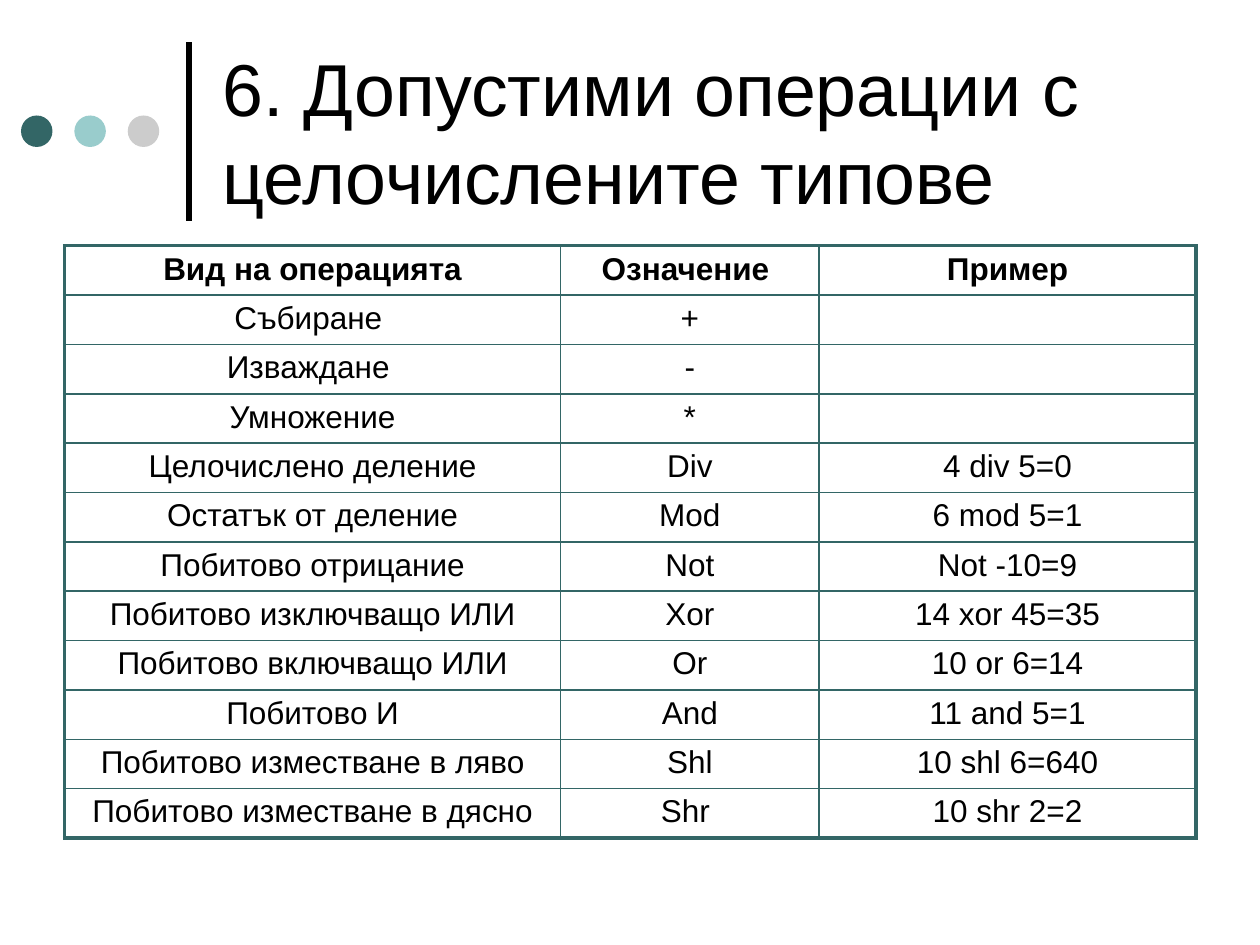
from lxml import etree
from pptx import Presentation
from pptx.dml.color import RGBColor
from pptx.enum.shapes import MSO_CONNECTOR, MSO_SHAPE
from pptx.enum.text import MSO_ANCHOR, PP_ALIGN
from pptx.oxml.ns import qn
from pptx.util import Pt

STRAIGHT = MSO_CONNECTOR.STRAIGHT
OVAL = MSO_SHAPE.OVAL
MIDDLE = MSO_ANCHOR.MIDDLE
CENTER = PP_ALIGN.CENTER

BLACK = RGBColor(0x00, 0x00, 0x00)
TEAL = RGBColor(0x33, 0x66, 0x66)
AQUA = RGBColor(0x99, 0xCC, 0xCC)
SILVER = RGBColor(0xCC, 0xCC, 0xCC)

TITLE = "6. Допустими операции с целочислените типове"
COLUMN_WIDTHS = (283.5, 147.6, 215.5)
ROW_HEIGHT = 27.4
THIN, THICK = 1, 2.25
OPERATIONS = (
    ("Вид на операцията", "Означение ", "Пример"),
    ("Събиране ", "+", ""),
    ("Изваждане ", "-", ""),
    ("Умножение", "*", ""),
    ("Целочислено деление", "Div", "4 div 5=0"),
    ("Остатък от деление", "Mod", "6 mod 5=1"),
    ("Побитово отрицание", "Not", "Not -10=9"),
    ("Побитово изключващо ИЛИ", "Xor", "14 xor 45=35"),
    ("Побитово включващо ИЛИ", "Or", "10 or 6=14"),
    ("Побитово И", "And", "11 and 5=1"),
    ("Побитово изместване в ляво", "Shl", "10 shl 6=640"),
    ("Побитово изместване в дясно", "Shr ", "10 shr 2=2"),
)


def apply_format(target, values):
    for name, value in values.items():
        setattr(target, name, value)


def write_text(para, text, size, bold=False):
    span = para.add_run()
    span.text = text
    apply_format(span.font, {"name": "Arial", "size": Pt(size), "bold": bold})
    span.font.color.rgb = BLACK


def set_borders(cell, widths):
    properties = cell._tc.get_or_add_tcPr()
    for index, (side, width) in enumerate(widths.items()):
        line = etree.Element(qn(f"a:ln{side}"), w=str(Pt(width)))
        fill = etree.SubElement(line, qn("a:solidFill"))
        etree.SubElement(fill, qn("a:srgbClr"), val=str(TEAL))
        properties.insert(index, line)


def add_dots(page, left, top, size, pitch):
    for index, color in enumerate((TEAL, AQUA, SILVER)):
        dot = page.shapes.add_shape(
            OVAL, Pt(left + index * pitch), Pt(top), Pt(size), Pt(size))
        dot.shadow.inherit = False
        dot.fill.solid()
        dot.fill.fore_color.rgb = color
        dot.line.fill.background()


def add_rule(page, left, top, height):
    rule = page.shapes.add_connector(
        STRAIGHT, Pt(left), Pt(top + height), Pt(left), Pt(top))
    rule.line.color.rgb = BLACK
    rule.line.width = Pt(3)
    etree.SubElement(rule._element.spPr, qn("a:effectLst"))


def add_title(page, left, top, width, height):
    box = page.shapes.add_textbox(Pt(left), Pt(top), Pt(width), Pt(height))
    apply_format(box.text_frame, {"word_wrap": True, "vertical_anchor": MIDDLE})
    write_text(box.text_frame.paragraphs[0], TITLE, 42)


def add_operations(page, left, top):
    rows, columns = len(OPERATIONS), len(COLUMN_WIDTHS)
    table = page.shapes.add_table(
        rows, columns, Pt(left), Pt(top),
        Pt(sum(COLUMN_WIDTHS)), Pt(rows * ROW_HEIGHT)).table
    apply_format(table, {"first_row": False, "horz_banding": False})
    for column, width in zip(table.columns, COLUMN_WIDTHS):
        column.width = Pt(width)
    for row_index, texts in enumerate(OPERATIONS):
        table.rows[row_index].height = Pt(ROW_HEIGHT)
        for column_index, text in enumerate(texts):
            cell = table.cell(row_index, column_index)
            apply_format(cell, {"margin_top": Pt(3.3), "margin_bottom": Pt(3.3)})
            cell.fill.background()
            outer_sides = {
                "L": column_index == 0,
                "R": column_index == columns - 1,
                "T": row_index == 0,
                "B": row_index == rows - 1,
            }
            set_borders(cell, {side: THICK if outer else THIN
                               for side, outer in outer_sides.items()})
            para = cell.text_frame.paragraphs[0]
            para.alignment = CENTER
            if text:
                write_text(para, text, 18, bold=row_index == 0)


def main():
    deck = Presentation()
    apply_format(deck, {"slide_width": Pt(720), "slide_height": Pt(540)})
    page = deck.slides.add_slide(deck.slide_layouts[6])
    add_rule(page, 108, 24, 102)
    add_dots(page, 12, 66, 18, 30.5)
    add_title(page, 120, 15, 552, 120)
    add_operations(page, 36.9, 140.4)
    deck.save("out.pptx")


if __name__ == "__main__":
    main()
